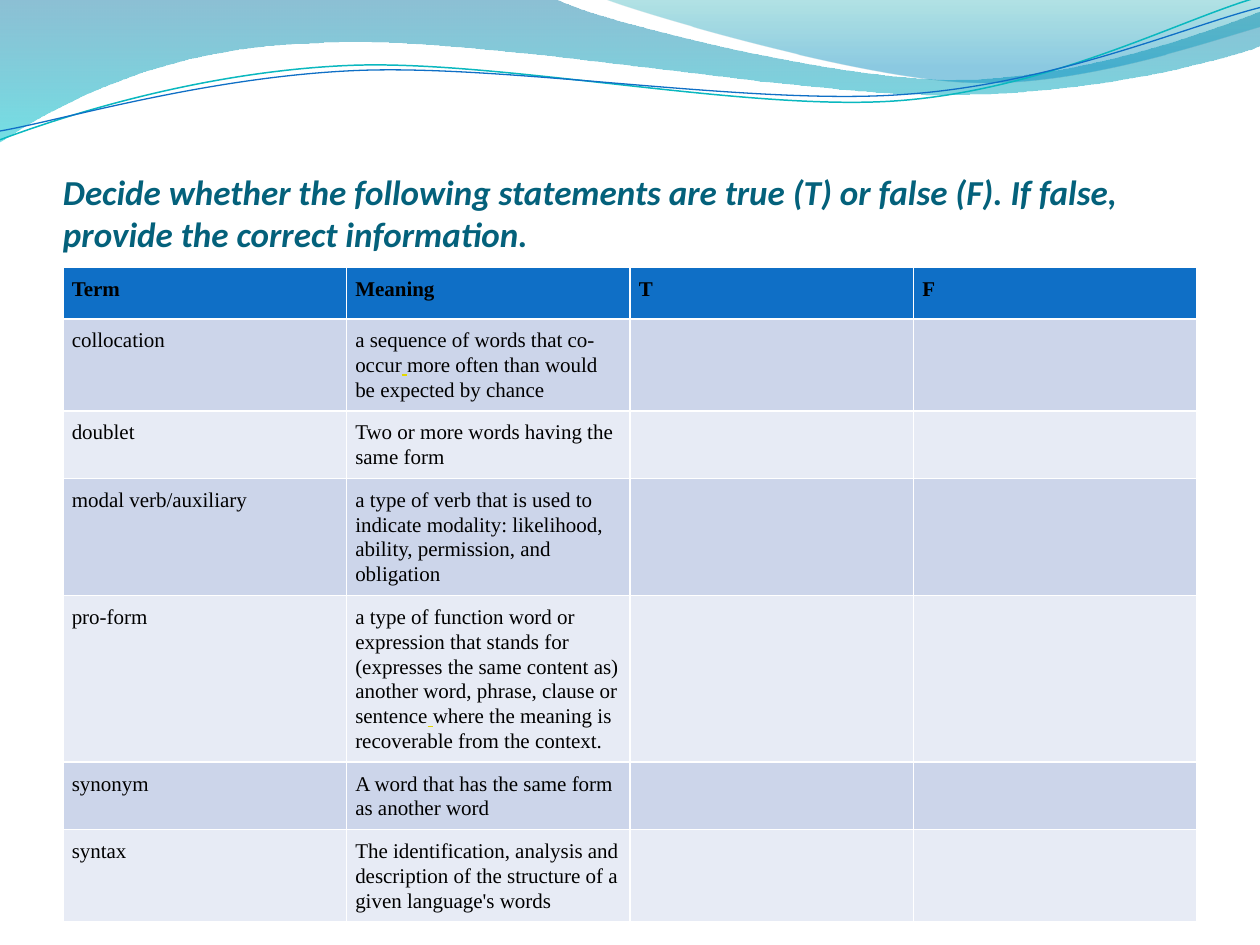
"""Build a true-or-false grammar quiz slide with a wave banner."""
from lxml.etree import SubElement
from pptx import Presentation
from pptx.dml.color import RGBColor
from pptx.enum.text import MSO_ANCHOR
from pptx.oxml.ns import qn
from pptx.util import Inches, Pt

deck = Presentation()
deck.slide_width, deck.slide_height = Inches(10), Inches(7.5)
slide = deck.slides.add_slide(deck.slide_layouts[6])
wide, high = deck.slide_width, deck.slide_height
unit = wide // 20
hue = RGBColor.from_string


def write(para, text, tint, form):
    run = para.add_run()
    run.text = text
    run.font.color.rgb = hue(tint)
    for key, val in form.items():
        setattr(run.font, key, val)
    return run


def trace(start, legs, close):
    ends = [start] + [leg[-2:] for leg in legs]
    spots = [(Inches(x), Inches(y)) for x, y in ends]
    pen = slide.shapes.build_freeform(*spots[0], scale=1.0)
    pen.add_line_segments(spots[1:], close=close)
    shape = pen.convert_to_shape()
    shape.shadow.inherit = False
    lines = list(shape._element.iter(qn("a:lnTo")))
    for line, leg in zip(lines, legs):
        if len(leg) == 6:
            line.tag = qn("a:cubicBezTo")
            line.remove(line[0])
            for x, y in zip(leg[::2], leg[1::2]):
                SubElement(line, qn("a:pt"), x=str(Inches(x) - shape.left), y=str(Inches(y) - shape.top))
    return shape


bands = [
    ((0, 0), [(4.4, -0.01), (4.76, 0.17, 6.64, 0.63, 7.58, 0.63),
              (8.53, 0.63, 9.58, 0.26, 10, 0.09), (10.01, 0.36),
              (9.83, 0.44, 8.7, 0.76, 7.46, 0.75), (6.22, 0.75, 3.82, 0.28, 2.57, 0.34),
              (1.29, 0.36, 0.46, 0.83, -0.01, 1.13), (0, 0)],
     [(0, "0074A1", 45), (100, "00C6CF", 55)]),
    ((4.79, -0.01), [(5.09, 0.11, 6.82, 0.62, 7.69, 0.65),
                     (8.56, 0.69, 9.61, 0.32, 10, 0.21), (10, 0), (4.79, -0.01)],
     [(0, "00A1A9", 30), (80, "008BBF", 45)]),
]
for start, legs, stops in bands:
    band = trace(start, legs, True)
    band.line.fill.background()
    band.fill.gradient()
    band.fill.gradient_angle = 270
    stack = next(band._element.iter(qn("a:gsLst")))
    for old in list(stack):
        stack.remove(old)
    for pos, tint, alpha in stops:
        stop = SubElement(stack, qn("a:gs"), pos=str(pos * 1000))
        paint = SubElement(stop, qn("a:srgbClr"), val=tint)
        SubElement(paint, qn("a:alpha"), val=str(alpha * 1000))

waves = [
    ((0, 1.11), [(0.48, 0.93, 1.58, 0.57, 2.77, 0.52), (3.95, 0.47, 5.93, 0.89, 7.13, 0.8),
                 (8.33, 0.71, 9.38, 0.15, 9.98, -0.02)], "0AB8BF", 0.85),
    ((0, 1.04), [(0.47, 0.96, 1.64, 0.61, 2.83, 0.56), (4.03, 0.51, 5.97, 0.84, 7.17, 0.75),
                 (8.36, 0.67, 9.41, 0.21, 10, 0.06)], "0F6FC6", 0.75),
]
for start, legs, tint, thick in waves:
    wave = trace(start, legs, False)
    wave.fill.background()
    wave.line.color.rgb = hue(tint)
    wave.line.width = Pt(thick)

title = slide.shapes.add_textbox(unit, Inches(0.77), wide - 2 * unit, high // 6)
frame = title.text_frame
look = {"word_wrap": True, "vertical_anchor": MSO_ANCHOR.BOTTOM, "margin_left": 0,
        "margin_right": 0, "margin_top": Inches(0.05), "margin_bottom": 0}
for key, val in look.items():
    setattr(frame, key, val)
write(frame.paragraphs[0], "Decide whether the following statements are true (T) or false (F). "
      "If false, provide the correct information.", "04617B",
      {"name": "Calibri", "size": Pt(20), "bold": True, "italic": True})

rows = [
    ("Term", "Meaning", "T", "F"),
    ("collocation", "a sequence of words that co-occur| |more often than would be expected by chance"),
    ("doublet", "Two or more words having the same form"),
    ("modal verb/auxiliary", "a type of verb that is used to indicate modality: "
     "likelihood, ability, permission, and obligation"),
    ("pro-form", "a type of function word or expression that stands for (expresses the same "
     "content as) another word, phrase, clause or sentence| |where the meaning is "
     "recoverable from the context."),
    ("synonym", "A word that has the same form as another word"),
    ("syntax", "The identification, analysis and description of the structure of a "
     "given language's words"),
]
pad = {f"margin_{side}": Inches(0.07) for side in ("left", "right", "top", "bottom")}
grid = slide.shapes.add_table(len(rows), 4, unit, Inches(2.12), wide - 2 * unit,
                              Inches(0.41) * len(rows)).table
for r, row in enumerate(rows):
    for c in range(4):
        cell = grid.cell(r, c)
        cell.fill.solid()
        cell.fill.fore_color.rgb = hue("0F6FC6" if r == 0 else ("E7EBF5", "CCD5EA")[r % 2])
        if c >= len(row):
            continue
        for key, val in pad.items():
            setattr(cell, key, val)
        para = cell.text_frame.paragraphs[0]
        para.line_spacing = Pt(14.2)
        for part in row[c].split("|"):
            gap = part == " "
            run = write(para, part, "E2D700" if gap else "000000",
                        {"name": "Times New Roman", "size": Pt(12), "bold": r == 0, "underline": gap})
            if gap:
                ink = run._r.rPr.find(qn("a:solidFill"))
                under = SubElement(run._r.rPr, qn("a:uFill"))
                ink.addnext(under)
                SubElement(SubElement(under, qn("a:solidFill")), qn("a:srgbClr"), val="E2D700")

deck.save("out.pptx")
